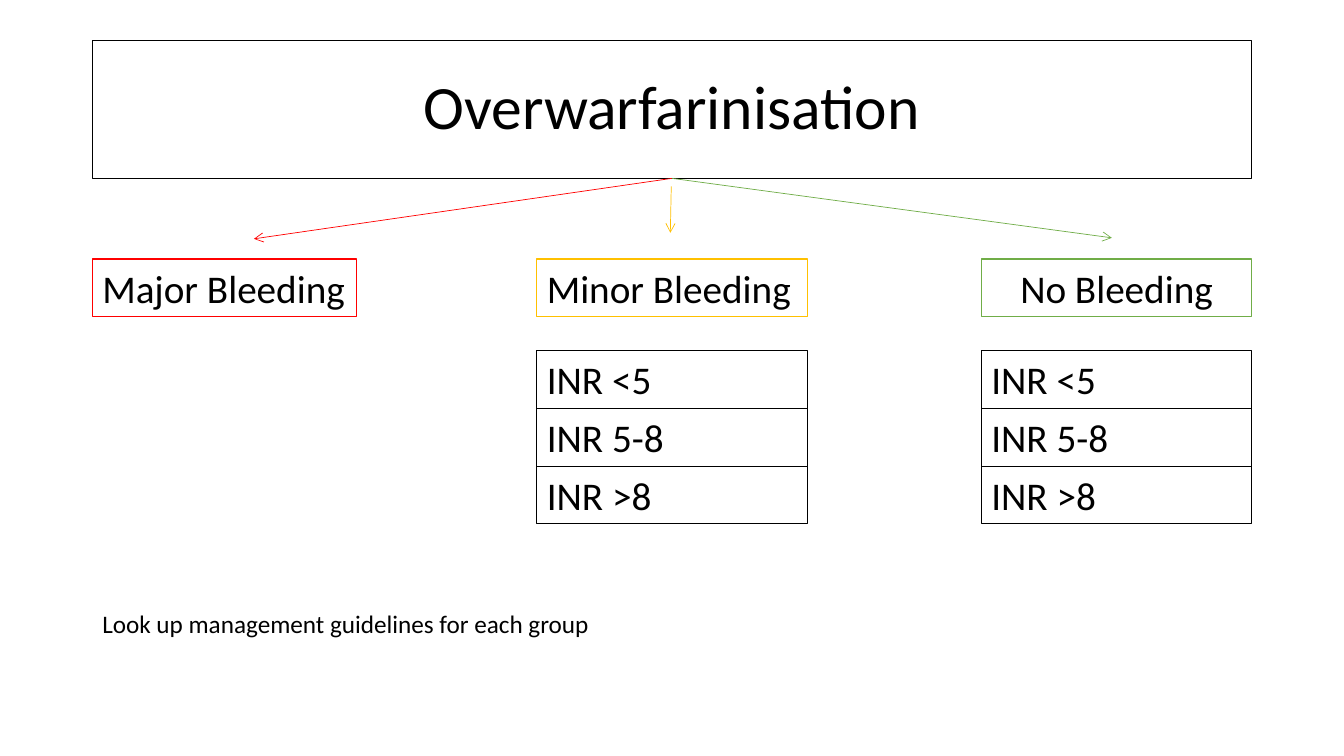
from dataclasses import dataclass

from lxml import etree
from pptx import Presentation
from pptx.dml.color import RGBColor
from pptx.enum.shapes import MSO_CONNECTOR, MSO_SHAPE
from pptx.enum.text import MSO_ANCHOR, PP_ALIGN
from pptx.oxml.ns import qn
from pptx.util import Pt

RECTANGLE = MSO_SHAPE.RECTANGLE
STRAIGHT = MSO_CONNECTOR.STRAIGHT
LEFT, CENTER = PP_ALIGN.LEFT, PP_ALIGN.CENTER
TOP, MIDDLE = MSO_ANCHOR.TOP, MSO_ANCHOR.MIDDLE
BOTTOM_SIDE = 2


@dataclass(frozen=True)
class Theme:
    font: str = "Calibri"
    ink: str = "000000"
    major: str = "FF0000"
    minor: str = "FFC000"
    none: str = "70AD47"
    title_size: float = 44
    label_size: float = 28
    note_size: float = 18
    border: float = 0.75
    arrow: float = 0.5


THEME = Theme()
MARGIN = 66
CONTENT_WIDTH = 828
BOX_HEIGHT = 41.2
LABEL_TOP = 185
RANGES_TOP = 250.5
INR_RANGES = ("INR <5", "INR 5-8", "INR >8")


def write_text(shape, text, size=THEME.label_size, align=LEFT, anchor=TOP, spacing=None):
    frame = shape.text_frame
    frame.word_wrap = True
    frame.vertical_anchor = anchor
    para = frame.paragraphs[0]
    para.alignment = align
    para.line_spacing = spacing
    span = para.add_run()
    span.text = text
    span.font.name = THEME.font
    span.font.size = Pt(size)
    span.font.color.rgb = RGBColor.from_string(THEME.ink)


def add_box(shapes, text, left, top, width, height=BOX_HEIGHT, border=THEME.ink, **text_format):
    box = shapes.add_shape(RECTANGLE, Pt(left), Pt(top), Pt(width), Pt(height))
    box.shadow.inherit = False
    box.fill.background()
    box.line.color.rgb = RGBColor.from_string(border)
    box.line.width = Pt(THEME.border)
    write_text(box, text, **text_format)
    return box


def add_arrow(page, start, end, color):
    arrow = page.shapes.add_connector(STRAIGHT, *map(Pt, start + end))
    arrow.line.color.rgb = RGBColor.from_string(color)
    arrow.line.width = Pt(THEME.arrow)
    properties = arrow.line._get_or_add_ln()
    etree.SubElement(properties, qn("a:tailEnd"), type="arrow")
    etree.SubElement(arrow._element.spPr, qn("a:effectLst"))
    return arrow


def add_ranges(page, left, width):
    group = page.shapes.add_group_shape()
    for row, text in enumerate(INR_RANGES):
        add_box(group.shapes, text, left, RANGES_TOP + row * BOX_HEIGHT, width)


def add_note(page, text):
    note = page.shapes.add_textbox(Pt(MARGIN), Pt(431.3), Pt(CONTENT_WIDTH), Pt(29))
    write_text(note, text, size=THEME.note_size)


def main():
    deck = Presentation()
    deck.slide_width, deck.slide_height = Pt(960), Pt(540)
    page = deck.slides.add_slide(deck.slide_layouts[6])

    title = add_box(page.shapes, "Overwarfarinisation", MARGIN, 28.75, CONTENT_WIDTH, 98.65,
                    size=THEME.title_size, align=CENTER, anchor=MIDDLE, spacing=0.9)

    for text, left, width, color, align in (
        ("Major Bleeding", MARGIN, 188.7, THEME.major, LEFT),
        ("Minor Bleeding", 383.5, 193, THEME.minor, LEFT),
        ("No Bleeding", 701, 193, THEME.none, CENTER),
    ):
        add_box(page.shapes, text, left, LABEL_TOP, width, border=color, align=align)
        if color != THEME.major:
            add_ranges(page, left, width)

    fork = (480, 127.4)
    for end, color in (((181.4, 170.6), THEME.major), ((794.2, 169.9), THEME.none)):
        add_arrow(page, fork, end, color).begin_connect(title, BOTTOM_SIDE)
    add_arrow(page, (479.5, 133.2), (478.8, 166.3), THEME.minor)

    add_note(page, "Look up management guidelines for each group")
    deck.save("out.pptx")


if __name__ == "__main__":
    main()
